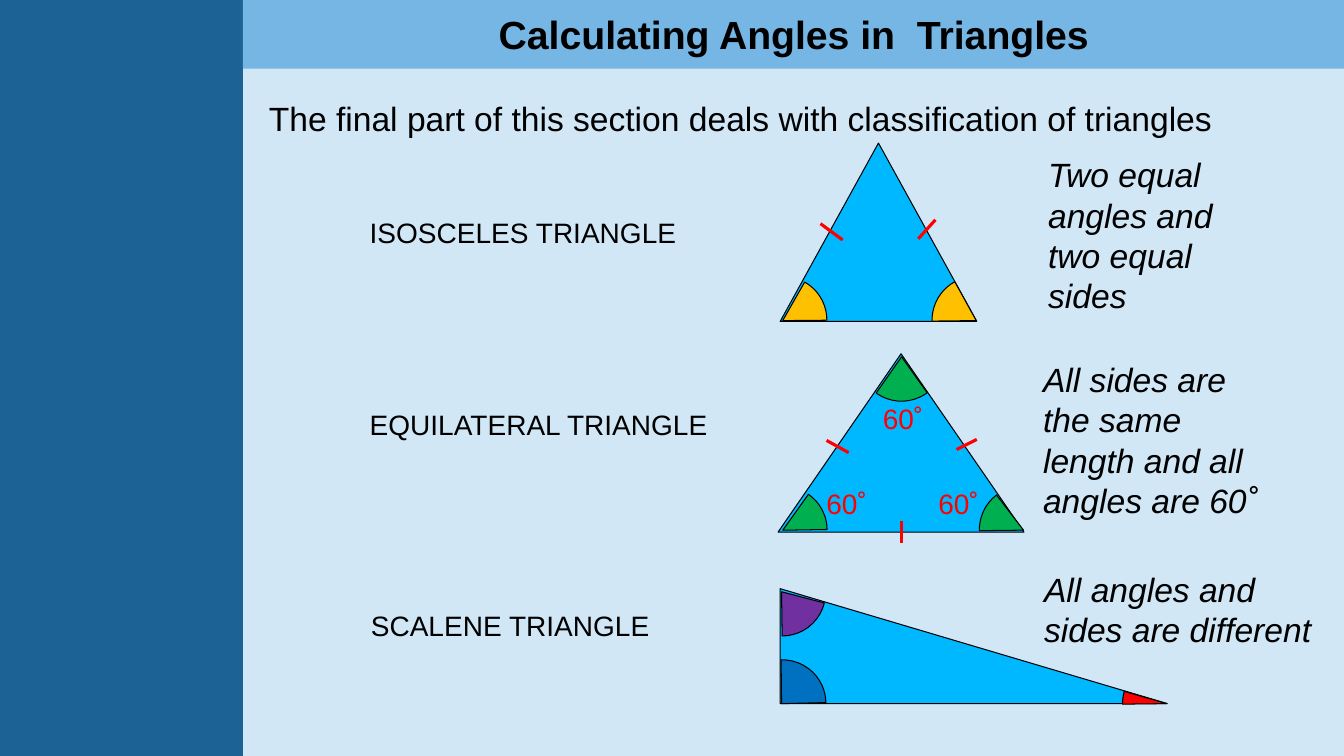
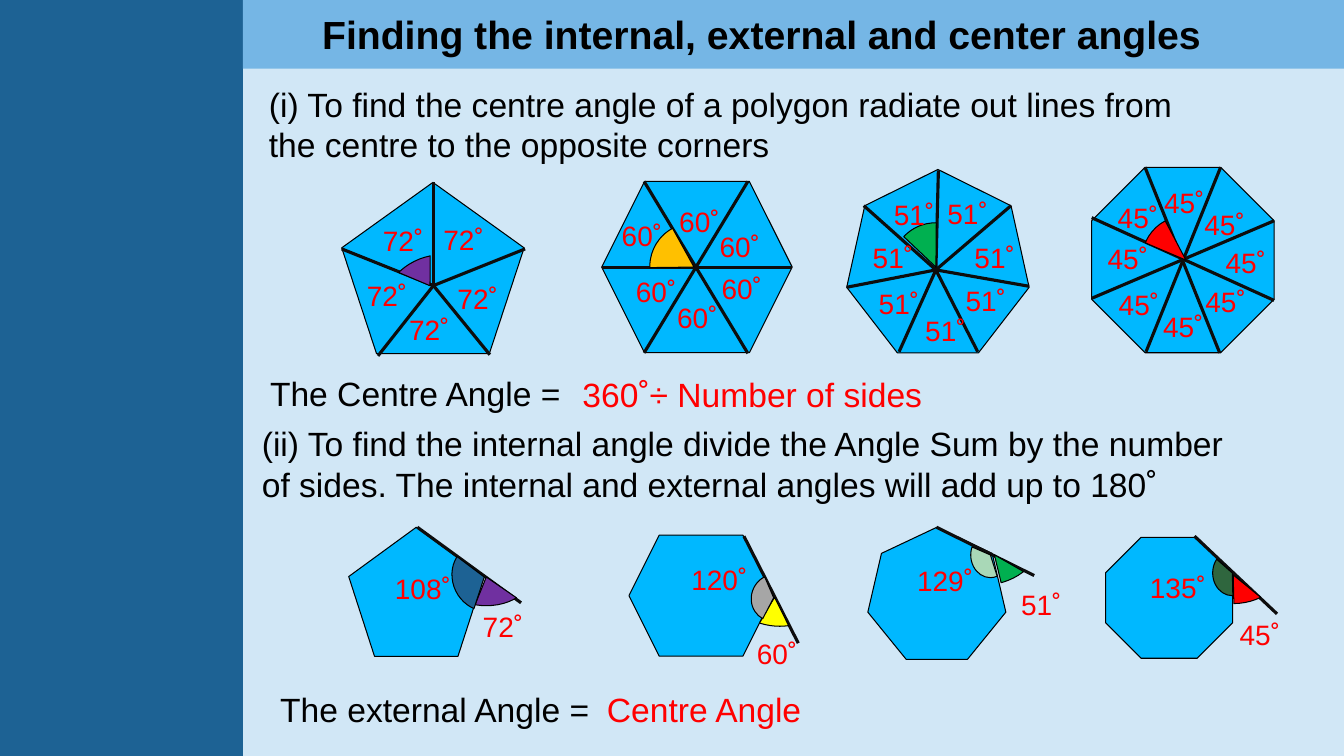
from lxml import etree
from pptx import Presentation
from pptx.dml.color import RGBColor
from pptx.enum import shapes, text
from pptx.oxml import ns
from pptx.util import Pt

FONT = "Arial"
COLOURS = {
    "page": "D1E7F6", "side": "1D6294", "header": "75B6E5",
    "polygon": "00B8FF", "black": "000000", "spoke": "0D0D0D",
    "red": "FF0000", "amber": "FFC000", "green": "00B050",
    "purple": "7030A0", "blue": "0070C0", "yellow": "FFFF00",
    "grey": "A6A6A6", "mint": "A9D8B7", "forest": "2F663E",
}
RGB = {name: RGBColor.from_string(value) for name, value in COLOURS.items()}
PRESET = shapes.MSO_SHAPE
ARC = (62.6, 63.4)  # size of a round angle marker
FLAT_ARC = (62.6, 41)  # size of a flattened angle marker
LABEL_HEIGHT = 31.7


def draw(slide, preset, box, fill, outlined=True, turn=0, sweep=()):
    """Add a filled shape; sweep holds the start and end degrees of a pie."""
    shape = slide.shapes.add_shape(preset, *map(Pt, box))
    shape.shadow.inherit = False
    shape.fill.solid()
    shape.fill.fore_color.rgb = RGB[fill]
    if outlined:
        shape.line.color.rgb = RGB["black"]
        shape.line.width = Pt(0.75)
    else:
        shape.line.fill.background()
    shape.rotation = turn
    for i, degrees in enumerate(sweep):
        shape.adjustments[i] = degrees * 0.6
    return shape


def stroke(slide, start, end, colour):
    """Add a straight line without a shadow."""
    line = slide.shapes.add_connector(
        shapes.MSO_CONNECTOR.STRAIGHT, *map(Pt, (*start, *end)))
    line.line.color.rgb = RGB[colour]
    line.line.width = Pt(2.25)
    etree.SubElement(line.element.spPr, ns.qn("a:effectLst"))


prs = Presentation()
prs.slide_width, prs.slide_height = Pt(960), Pt(540)

# Shared layout: page colour, title placeholder only
layout = prs.slide_layouts[5]
layout.background.fill.solid()
layout.background.fill.fore_color.rgb = RGB["page"]
for holder in list(layout.placeholders):
    if holder.placeholder_format.type != shapes.PP_PLACEHOLDER.TITLE:
        holder.element.getparent().remove(holder.element)

# Slides with their titles
titles = [
    ("Calculating Angles in  Triangles", 174),
    ("Finding the internal, external and center angles", 151),
]
slides = []
for words, left in titles:
    slide = prs.slides.add_slide(layout)
    title = slide.shapes.title
    title.left, title.top, title.width, title.height = map(Pt, (left, 3.6, 786, 41))
    frame = title.text_frame
    frame.auto_size = text.MSO_AUTO_SIZE.NONE
    frame.vertical_anchor = text.MSO_ANCHOR.TOP
    paragraph = frame.paragraphs[0]
    paragraph.alignment = text.PP_ALIGN.CENTER
    run = paragraph.add_run()
    run.text = words
    run.font.name, run.font.size, run.font.bold = FONT, Pt(28), True
    run.font.color.rgb = RGB["black"]
    slides.append(slide)
triangles_slide, polygons_slide = slides

# Shared bands, placed on the layout behind the title
bands = [((0, 0, 173.5, 540), "side"), ((173.5, 0, 786.5, 49), "header")]
for depth, (box, fill) in enumerate(bands, start=2):
    band = draw(triangles_slide, PRESET.RECTANGLE, box, fill, outlined=False)
    layout.shapes.element.insert(depth, band.element)

# Triangles
for preset, box in [
    (PRESET.ISOSCELES_TRIANGLE, (557.3, 102.2, 140.4, 127.4)),
    (PRESET.ISOSCELES_TRIANGLE, (555.8, 252.7, 175.7, 127.4)),
    (PRESET.RIGHT_TRIANGLE, (557.3, 420.5, 276.5, 82.1)),
]:
    draw(triangles_slide, preset, box, "polygon")

# Ticks on the equal sides
for start, end in [
    ((655.9, 170.6), (668.2, 157)),
    ((586.1, 159.8), (601.9, 171.4)),
    ((590.4, 314.6), (606.2, 323.3)),
    ((643.7, 372.2), (643.7, 388.1)),
    ((683.3, 321.1), (697.7, 313.9)),
]:
    stroke(triangles_slide, start, end, "red")

# Angles of the triangles
for corner, turn, sweep, fill in [
    ((666, 197.3), 129.1, (50.2, 112), "amber"),
    ((527.8, 197.3), 228.3, (71.4, 131.2), "amber"),
    ((699.8, 347), 129.1, (50.2, 103.3), "green"),
    ((612.7, 223.2), 4.3, (50.2, 120.7), "green"),
    ((527.8, 347), 250.6, (54.9, 108.4), "green"),
    ((527, 391), 322.6, (52, 126.6), "purple"),
    ((527, 470.9), 246.6, (22.7, 112), "blue"),
    ((802.1, 470.9), 129.1, (50.2, 66.9), "red"),
]:
    draw(triangles_slide, PRESET.PIE, (*corner, *ARC), fill, turn=turn, sweep=sweep)

# Text: slide, words, box, size, colour, italic, wrap
captions = [
    (triangles_slide, "The final part of this section deals with classification of triangles",
     (185, 66.2, 699.8, 36), 24, "black", False, True),
    (polygons_slide, "(i) To find the centre angle of a polygon radiate out lines from "
     "the centre to the opposite corners", (185, 56.2, 697.7, 65.5), 24, "black", False, True),
    (polygons_slide, "The Centre Angle =",
     (185.8, 262.8, 231.1, 36), 24, "black", False, False),
    (polygons_slide, "360˚÷ Number of sides",
     (409, 263.5, 283.7, 36), 24, "red", False, True),
    (polygons_slide, "(ii) To find the internal angle divide the Angle Sum by the number "
     "of sides. The internal and external angles will add up to 180˚",
     (180, 298.8, 717.1, 65.5), 24, "black", False, True),
    (polygons_slide, "The external Angle =",
     (193, 488.9, 257.8, 36), 24, "black", False, True),
    (polygons_slide, "Centre Angle",
     (426.5, 488.2, 154.6, 36), 24, "red", False, False),
]
for name, left, top, width in [
    ("ISOSCELES TRIANGLE", 257, 150.5, 266.4),
    ("EQUILATERAL TRIANGLE", 257, 287.3, 257.8),
    ("SCALENE TRIANGLE", 257.8, 431.3, 215.3),
]:
    captions.append((triangles_slide, name, (left, top, width, LABEL_HEIGHT),
                     20, "black", False, name.startswith("ISO")))
for note, box in [
    ("Two equal angles and two equal sides", (741.6, 106.6, 138.2, 123.8)),
    ("All sides are the same length and all angles are 60˚", (738, 252.7, 175.7, 123.8)),
    ("All angles and sides are different", (738.7, 402.5, 219.6, 65.5)),
]:
    captions.append((triangles_slide, note, box, 24, "black", True, True))

# Angle values: slide, value, width, places
angle_values = [
    (triangles_slide, "60˚", 43.9, [(663.1, 344.2), (583.2, 344.2), (623.5, 283)]),
]

# Polygons with lines radiating from the centre
centre_row = [
    dict(preset=PRESET.REGULAR_PENTAGON, box=(244.1, 130.3, 130.3, 122.4),
         hub=(309.6, 204),
         corners=[(309.6, 130.3), (375.1, 177.8), (349.9, 253.4), (270, 254.2),
                  (244.1, 177.8)],
         marker=(275.8, 183.6, *FLAT_ARC), turn=158.4, sweep=(44.5, 112), fill="purple",
         value="72˚", places=[(319.7, 197.3), (285.1, 219.6), (254.9, 195.1),
                              (266.4, 156.2), (309.6, 155.5)]),
    dict(preset=PRESET.HEXAGON, box=(429.8, 129.6, 136.1, 122.4),
         corners=[(460.1, 129.6), (534.2, 129.6), (565.9, 190.8), (534.2, 252.4),
                  (460.1, 252), (429.8, 190.8)],
         marker=(464.4, 159.1, *ARC), turn=129.1, sweep=(50.2, 112), fill="amber",
         value="60˚", places=[(508.3, 190.1), (478.1, 142.6), (506.9, 160.6),
                              (476.6, 211), (447.1, 192.2), (437, 152.6)]),
    dict(preset=PRESET.HEPTAGON, box=(604.8, 121, 130.3, 131),
         hub=(668.5, 192.8),
         corners=[(670.3, 121.7), (722.2, 146.9), (735.1, 204.5), (698.4, 251.3),
                  (642.2, 251.3), (604.8, 205.2), (617, 146.9)],
         marker=(637.2, 159.1, *ARC), turn=156, sweep=(67.4, 114.4), fill="green",
         value="51˚", places=[(620.6, 200.9), (653.8, 220.3), (682.6, 198.7),
                              (616.3, 168.5), (631.4, 137.5), (669.6, 136.8),
                              (689, 168.5)]),
    dict(preset=PRESET.OCTAGON, box=(779.8, 119.5, 130.3, 132.5),
         corners=[(817.9, 119.5), (871.9, 119.5), (910.1, 157.7), (910.1, 214.6),
                  (871.2, 252), (818.6, 251.3), (779.8, 213.1), (779.8, 155.5)],
         marker=(815.8, 154.1, *ARC), turn=152.8, sweep=(50.2, 89.3), fill="red",
         value="45˚", places=[(853.2, 144.7), (823.7, 217.4), (784.1, 169.2),
                              (791.3, 139.7), (824.4, 128.9), (792, 201.6),
                              (853.9, 199.4), (868.3, 172.1)]),
]
for polygon in centre_row:
    draw(polygons_slide, polygon["preset"], polygon["box"], "polygon")
    corners = polygon["corners"]
    sides = len(corners)
    # Odd polygons use spokes to the hub, even ones full diagonals
    ends = [polygon["hub"]] * sides if sides % 2 else corners[sides // 2:]
    for start, end in zip(corners, ends):
        stroke(polygons_slide, start, end, "spoke")
    draw(polygons_slide, PRESET.PIE, polygon["marker"], polygon["fill"],
         turn=polygon["turn"], sweep=polygon["sweep"])
    angle_values.append((polygons_slide, polygon["value"], 43.9, polygon["places"]))

# Polygons with one side extended; markers: box, turn, sweep, fill
side_row = [
    dict(preset=PRESET.REGULAR_PENTAGON, box=(249.1, 376.6, 96.5, 92.2),
         side=((372.2, 430.6), (298.1, 376.6)),
         markers=[((316.1, 391.7, *FLAT_ARC), 0, (34.6, 112), "purple"),
                  ((321.1, 389.5, 49.7, 45.4), 63.7, (44.5, 153.2), "side")],
         external=("72˚", (337.7, 432)), internal=("108˚", (275, 404.6))),
    dict(preset=PRESET.HEXAGON, box=(449.3, 382.3, 103, 86.4),
         side=((570.2, 459.4), (531.4, 383)),
         markers=[((522, 406.1, *FLAT_ARC), 8.1, (55.6, 112), "yellow"),
                  ((535.7, 411.1, 33.8, 31.7), 115.5, (2.1, 131), "grey")],
         external=("60˚", (533.5, 451.4)), internal=("120˚", (486.7, 398.2))),
    dict(preset=PRESET.HEPTAGON, box=(619.9, 376.6, 98.6, 94.3),
         side=((738.7, 411.1), (668.9, 376.6)),
         markers=[((679, 375.8, *FLAT_ARC), 343.9, (46, 92.4), "green"),
                  ((693.4, 380.2, 28.1, 32.4), 0, (72.4, 203.6), "mint")],
         external=("51˚", (722.2, 416.2)), internal=("129˚", (648, 398.9))),
    dict(preset=PRESET.OCTAGON, box=(789.8, 383.8, 90.7, 86.4),
         side=((912.2, 438.5), (853.2, 383)),
         markers=[((849.6, 390.2, *FLAT_ARC), 0, (39.2, 88.6), "red"),
                  ((866.2, 393.1, 28.1, 32.4), 0, (88.7, 221.3), "forest")],
         external=("45˚", (878.4, 437.8)), internal=("135˚", (814.3, 403.9))),
]
for polygon in side_row:
    draw(polygons_slide, polygon["preset"], polygon["box"], "polygon")
    stroke(polygons_slide, *polygon["side"], "spoke")
    for box, turn, sweep, fill in polygon["markers"]:
        draw(polygons_slide, PRESET.PIE, box, fill, turn=turn, sweep=sweep)
    for key, width in [("external", 43.9), ("internal", 54.7)]:
        value, place = polygon[key]
        angle_values.append((polygons_slide, value, width, [place]))

# Write all text on top of the figures
for slide, value, width, places in angle_values:
    for place in places:
        captions.append((slide, value, (*place, width, LABEL_HEIGHT),
                         20, "red", False, False))
for slide, words, box, size, colour, italic, wrap in captions:
    frame = slide.shapes.add_textbox(*map(Pt, box)).text_frame
    frame.word_wrap = wrap
    frame.auto_size = text.MSO_AUTO_SIZE.SHAPE_TO_FIT_TEXT
    run = frame.paragraphs[0].add_run()
    run.text = words
    run.font.name, run.font.size, run.font.italic = FONT, Pt(size), italic
    run.font.color.rgb = RGB[colour]

prs.save("out.pptx")
